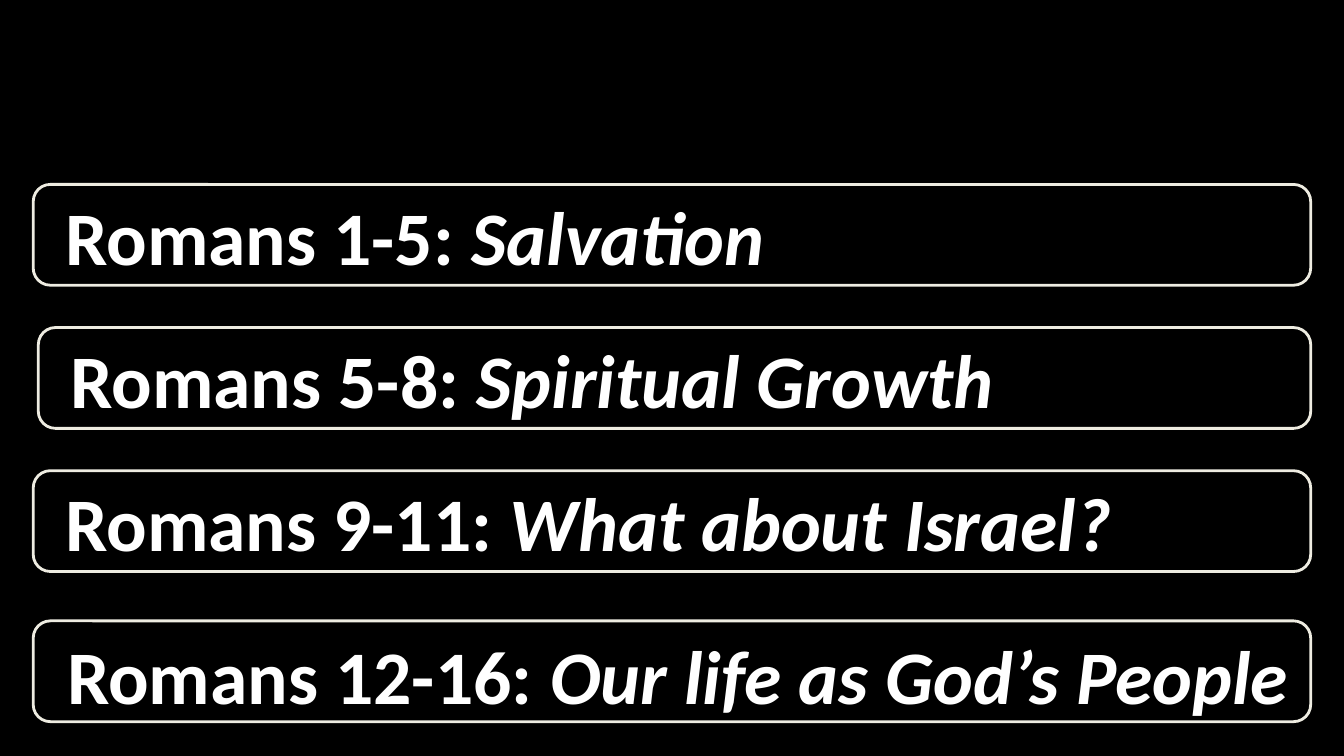
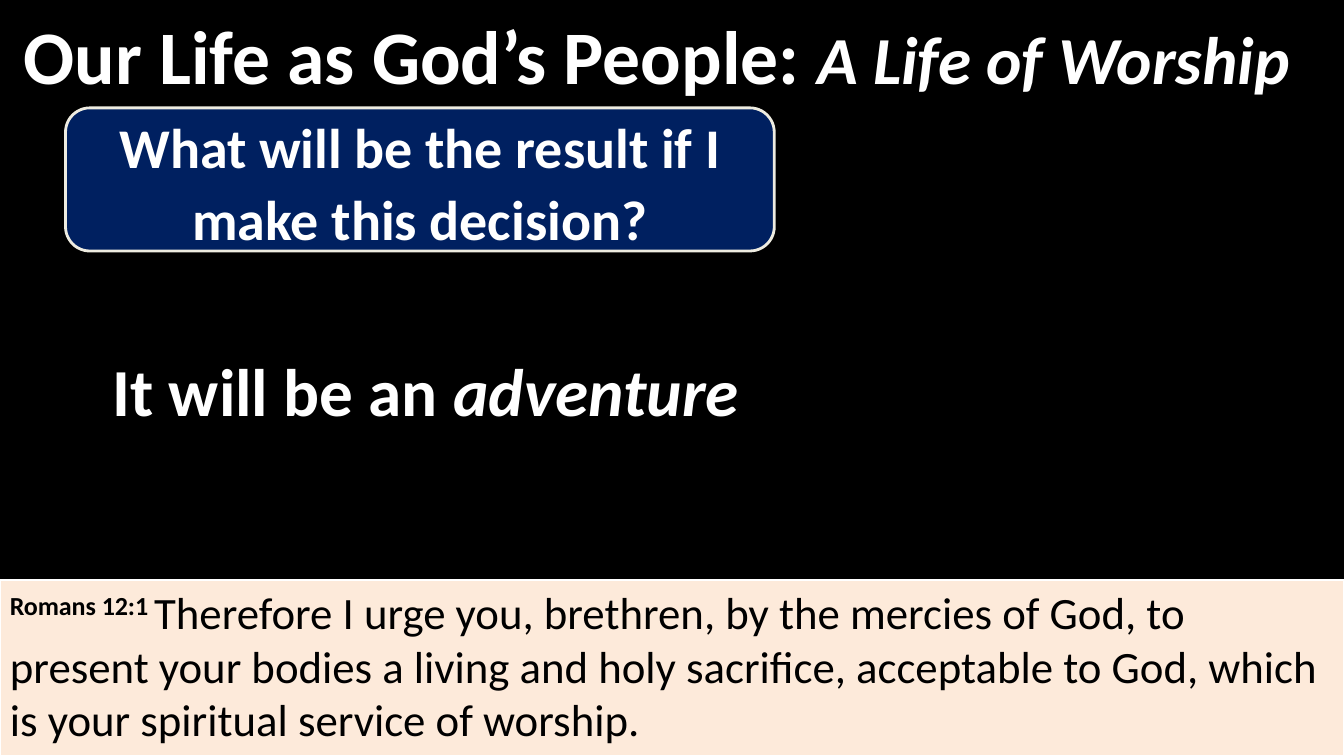
import dataclasses

import lxml.etree
import pptx
import pptx.dml.color
import pptx.enum.shapes
import pptx.enum.text
import pptx.oxml.ns
import pptx.util

PX = 9144
WIDTH, HEIGHT = 1333, 750


@dataclasses.dataclass(frozen=True)
class Theme:
    font: str = "Calibri"
    black: str = "000000"
    white: str = "FFFFFF"
    navy: str = "002060"
    cream: str = "EEECE1"
    peach: str = "FDEADA"
    row_size: int = 54
    lead_size: int = 60
    title_gap_size: int = 44
    subtitle_size: int = 48
    question_size: int = 40
    verse_size: int = 32
    outline: float = 2
    verse_outline: float = 1.5
    veil: int = 64
    answer_spacing: float = 1.07
    callout_tail: tuple = (-0.22, 0.5, 0.17)


THEME = Theme()
SHAPES = pptx.enum.shapes.MSO_SHAPE
ANCHOR = pptx.enum.text.MSO_ANCHOR
ALIGN = pptx.enum.text.PP_ALIGN

SECTIONS = [
    (33, 183, " ", "Romans 1-5: ", "Salvation", THEME.row_size),
    (38, 325, " ", "Romans 5-8: ", "Spiritual Growth", THEME.row_size),
    (33, 467, " ", "Romans 9-11: ", "What about Israel?", THEME.row_size),
    (33, 616, " ", "Romans 12-16: ", "Our life as God’s People", THEME.lead_size),
]
SECTION_RIGHT, SECTION_HEIGHT = 1300, 100

TITLE = [
    (" ", THEME.title_gap_size, {}),
    ("Our Life as God’s People: ", THEME.row_size, {}),
    ("A Life of Worship", THEME.subtitle_size, {"italic": True}),
]
QUESTION = [("What will be the result if I make this decision?", THEME.question_size, {})]
ANSWER = [
    ("It will be an ", THEME.subtitle_size, {}),
    ("adventure", THEME.subtitle_size, {"italic": True}),
]
VERSE = [
    ("Romans 12:1 ", THEME.verse_size, {"raised": True}),
    ("Therefore I urge you, brethren, by the mercies of God, to present your "
     "bodies a living and holy sacrifice, acceptable to God, which is your "
     "spiritual service of worship.", THEME.verse_size, {"bold": False}),
]


def rgb(value):
    return pptx.dml.color.RGBColor.from_string(value)


def add_slide(deck):
    slide = deck.slides.add_slide(deck.slide_layouts[6])
    slide.background.fill.solid()
    slide.background.fill.fore_color.rgb = rgb(THEME.black)
    return slide


def paint(panel, fill, veil, outline, outline_width):
    panel.shadow.inherit = False
    if fill:
        panel.fill.solid()
        panel.fill.fore_color.rgb = rgb(fill)
    else:
        panel.fill.background()
    if veil:
        colour = panel.fill._xPr.find(".//" + pptx.oxml.ns.qn("a:srgbClr"))
        alpha = lxml.etree.SubElement(colour, pptx.oxml.ns.qn("a:alpha"))
        alpha.set("val", str(veil * 1000))
    if outline:
        panel.line.color.rgb = rgb(outline)
        panel.line.width = pptx.util.Pt(outline_width)
    else:
        panel.line.fill.background()


def write(paragraph, runs, colour):
    for text, size, style in runs:
        run = paragraph.add_run()
        run.text = text
        run.font.name = THEME.font
        run.font.size = pptx.util.Pt(size)
        run.font.bold = style.get("bold", True)
        run.font.italic = style.get("italic", False)
        run.font.color.rgb = rgb(colour)
        if style.get("raised"):
            run._r.get_or_add_rPr().set("baseline", "30000")


def add_panel(slide, box, runs, preset=SHAPES.ROUNDED_RECTANGULAR_CALLOUT,
              fill=None, veil=None, outline=None, outline_width=THEME.outline,
              colour=THEME.white, anchor=ANCHOR.MIDDLE, align=ALIGN.LEFT,
              spacing=None):
    panel = slide.shapes.add_shape(preset, *(length * PX for length in box))
    if preset == SHAPES.ROUNDED_RECTANGULAR_CALLOUT:
        for index, value in enumerate(THEME.callout_tail):
            panel.adjustments[index] = value
    paint(panel, fill, veil, outline, outline_width)
    frame = panel.text_frame
    frame.word_wrap = True
    frame.vertical_anchor = anchor
    paragraph = frame.paragraphs[0]
    paragraph.alignment = align
    if spacing:
        paragraph.line_spacing = spacing
    write(paragraph, runs, colour)
    return panel


def build_outline(deck):
    slide = add_slide(deck)
    for left, top, lead, chapters, theme_name, lead_size in SECTIONS:
        runs = [
            (lead, lead_size, {}),
            (chapters, THEME.row_size, {}),
            (theme_name, THEME.row_size, {"italic": True}),
        ]
        add_panel(slide, (left, top, SECTION_RIGHT - left, SECTION_HEIGHT), runs,
                  fill=THEME.black, veil=THEME.veil, outline=THEME.cream)


def build_worship(deck):
    slide = add_slide(deck)
    add_panel(slide, (0, 0, WIDTH, 107), TITLE, preset=SHAPES.RECTANGLE,
              fill=THEME.black, veil=THEME.veil)
    add_panel(slide, (65, 107, 703, 142), QUESTION, fill=THEME.navy,
              outline=THEME.cream, align=ALIGN.CENTER, spacing=THEME.answer_spacing)
    verse = add_panel(slide, (0, 575, WIDTH, HEIGHT - 575), VERSE,
                      preset=SHAPES.RECTANGLE, fill=THEME.peach,
                      outline=THEME.white, outline_width=THEME.verse_outline,
                      colour=THEME.black, anchor=ANCHOR.TOP)
    verse.text_frame.margin_right = 15 * PX
    add_panel(slide, (76, 335, 693, 98), ANSWER, align=ALIGN.CENTER,
              spacing=THEME.answer_spacing)


def main():
    deck = pptx.Presentation()
    deck.slide_width = WIDTH * PX
    deck.slide_height = HEIGHT * PX
    build_outline(deck)
    build_worship(deck)
    deck.save("out.pptx")


if __name__ == "__main__":
    main()
